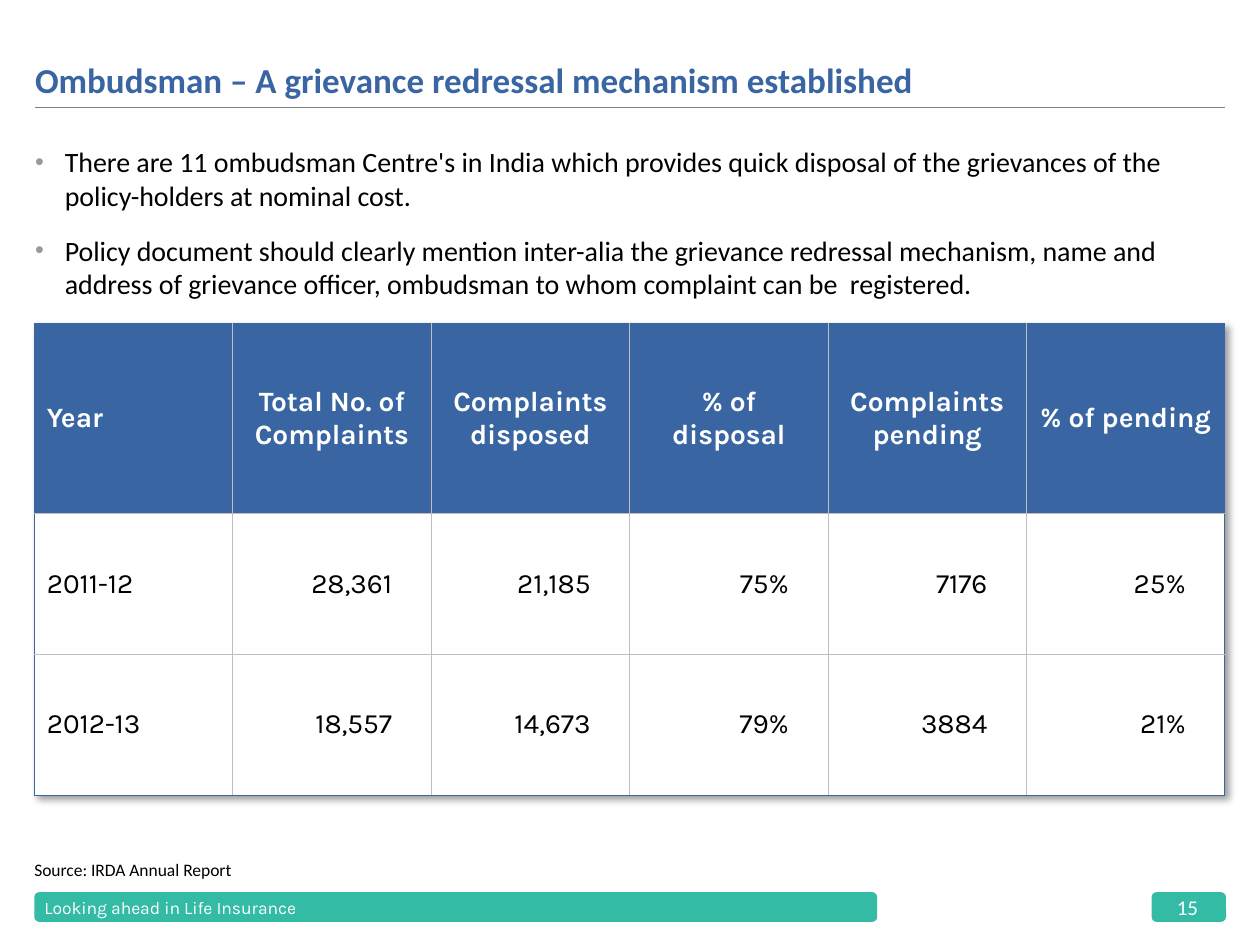
from lxml import etree
from pptx import Presentation
from pptx.dml.color import RGBColor
from pptx.enum.shapes import MSO_CONNECTOR, MSO_SHAPE
from pptx.enum.text import MSO_ANCHOR, PP_ALIGN
from pptx.oxml.ns import qn
from pptx.util import Pt

BLUE = RGBColor(0x39, 0x65, 0xA2)
TEAL = RGBColor(0x33, 0xBB, 0xA6)
RULE = RGBColor(0x80, 0x80, 0x80)
GRID = RGBColor(0xBF, 0xBF, 0xBF)
DOT = RGBColor(0x9A, 0x9A, 0x9A)
BLACK = RGBColor(0, 0, 0)
WHITE = RGBColor(0xFF, 0xFF, 0xFF)
TOP, MIDDLE, BOTTOM = MSO_ANCHOR.TOP, MSO_ANCHOR.MIDDLE, MSO_ANCHOR.BOTTOM
LEFT, CENTER, RIGHT = PP_ALIGN.LEFT, PP_ALIGN.CENTER, PP_ALIGN.RIGHT
ROUND, STRAIGHT = MSO_SHAPE.ROUNDED_RECTANGLE, MSO_CONNECTOR.STRAIGHT

POINTS = [
    "There are 11 ombudsman Centre's in India which provides quick disposal "
    "of the grievances of the policy-holders at nominal cost.",
    "Policy document should clearly mention inter-alia the grievance redressal "
    "mechanism, name and address of grievance officer, ombudsman to whom "
    "complaint can be  registered.",
]
ROWS = [
    ["Year", "Total No. of Complaints", "Complaints disposed", "% of disposal",
     "Complaints pending", "% of pending"],
    ["2011-12", "28,361", "21,185", "75%", "7176", "25%"],
    ["2012-13", "18,557", "14,673", "79%", "3884", "21%"],
]


def add_node(parent, tag, **attrs):
    """Append a drawing element and return it."""
    node = etree.SubElement(parent, qn(tag))
    for key, value in attrs.items():
        node.set(key, str(value))
    return node


def style(para, size, color, face="Calibri", bold=False):
    """Format every run of a paragraph."""
    for run in para.runs:
        font = run.font
        font.size, font.name, font.bold = Pt(size), face, bold
        font.color.rgb = color


def add_text(slide, box, lines, size, color, face="Calibri", bold=False,
             anchor=TOP, wrap=True):
    """Place a text box without margins and return its frame."""
    frame = slide.shapes.add_textbox(*map(Pt, box)).text_frame
    frame.margin_left = frame.margin_right = 0
    frame.margin_top = frame.margin_bottom = 0
    frame.word_wrap, frame.vertical_anchor = wrap, anchor
    frame.text = "\n".join(lines)
    for para in frame.paragraphs:
        style(para, size, color, face, bold)
    return frame


def add_title(slide, box):
    """Draw the title with the rule below it."""
    left, top, width, height = box
    add_text(slide, box, ["Ombudsman – A grievance redressal mechanism established"],
             20, BLUE, bold=True, anchor=BOTTOM)
    y = top + height + 3.6
    line = slide.shapes.add_connector(
        STRAIGHT, Pt(left), Pt(y), Pt(left + width), Pt(y))
    line.line.color.rgb, line.line.width = RULE, Pt(0.5)
    add_node(line._element.spPr, "a:effectLst")


def add_points(slide, box):
    """Draw the bulleted statements."""
    frame = add_text(slide, box, POINTS, 16, BLACK)
    for i, para in enumerate(frame.paragraphs):
        if i:
            para.space_before = Pt(12)
        props = para._p.get_or_add_pPr()
        props.set("marL", str(Pt(17)))
        props.set("indent", str(-Pt(17)))
        color = add_node(props, "a:buClr")
        add_node(color, "a:srgbClr", val=DOT)
        add_node(props, "a:buSzPct", val=90000)
        add_node(props, "a:buFont", typeface="Arial")
        add_node(props, "a:buChar", char="•")


def set_edges(cell, colors):
    """Set left, right, top and bottom cell borders."""
    props = cell._tc.get_or_add_tcPr()
    for i, (side, color) in enumerate(zip("LRTB", colors)):
        edge = etree.Element(qn("a:ln" + side), w=str(Pt(0.5)))
        fill = add_node(edge, "a:solidFill")
        add_node(fill, "a:srgbClr", val=color)
        props.insert(i, edge)


def add_shadow(table):
    """Give the table a soft shadow to the lower right."""
    effects = etree.Element(qn("a:effectLst"))
    table._tbl.tblPr.insert(0, effects)
    shadow = add_node(effects, "a:outerShdw", blurRad=Pt(4), dist=Pt(3),
                      dir=2700000, algn="tl", rotWithShape=0)
    color = add_node(shadow, "a:srgbClr", val=BLACK)
    add_node(color, "a:alpha", val=40000)


def add_grid(slide, box):
    """Draw the complaints table."""
    left, top, width, height = box
    rows, cols = len(ROWS), len(ROWS[0])
    table = slide.shapes.add_table(rows, cols, *map(Pt, box)).table
    add_shadow(table)
    head = 108.7
    for r, row in enumerate(table.rows):
        row.height = Pt((height - head) / (rows - 1) if r else head)
    for col in table.columns:
        col.width = Pt(width / cols)
    for r, texts in enumerate(ROWS):
        for c, text in enumerate(texts):
            cell = table.cell(r, c)
            cell.fill.solid()
            cell.fill.fore_color.rgb = WHITE if r else BLUE
            cell.vertical_anchor = MIDDLE
            cell.margin_left = cell.margin_top = cell.margin_bottom = Pt(7.2)
            cell.margin_right = Pt(22.3 if r and c else 7.2)
            cell.text = text
            para = cell.text_frame.paragraphs[0]
            para.alignment = LEFT if c == 0 else RIGHT if r else CENTER
            style(para, 16, BLACK if r else WHITE, "Karla", r == 0)
            outer = (c == 0, c == cols - 1, r == 0, r == rows - 1)
            set_edges(cell, [BLUE if edge else GRID for edge in outer])


def add_bar(slide, box):
    """Draw one rounded footer bar."""
    bar = slide.shapes.add_shape(ROUND, *map(Pt, box))
    bar.shadow.inherit = False
    bar.fill.solid()
    bar.fill.fore_color.rgb = TEAL
    bar.line.fill.background()


def add_footer(slide, box):
    """Draw the footer bars with their labels."""
    left, top, width, height = box
    page = 42.5
    end = left + width - page
    add_bar(slide, (left, top, 481.7, height))
    add_bar(slide, (end, top, page, height))
    add_text(slide, (left + 5.8, top + 1.4, 226.8, 14.4),
             ["Looking ahead in Life Insurance"], 10, WHITE, "Karla",
             anchor=MIDDLE, wrap=False)
    add_text(slide, (end + 14.4, top + 1.4, 14.4, 14.4), ["15"], 12, WHITE,
             anchor=MIDDLE, wrap=False)


def main():
    """Build and save the slide."""
    deck = Presentation()
    deck.slide_width, deck.slide_height = Pt(720), Pt(540)
    slide = deck.slides.add_slide(deck.slide_layouts[6])
    add_title(slide, (20, 6.5, 680, 51.1))
    add_points(slide, (20, 82.8, 680, 90))
    add_grid(slide, (19.6, 184.8, 680.4, 269.6))
    add_text(slide, (19.6, 491, 680.4, 12.2), ["Source: IRDA Annual Report"],
             10, BLACK, anchor=BOTTOM)
    add_footer(slide, (19.6, 509.8, 681, 17))
    deck.save("out.pptx")


if __name__ == "__main__":
    main()
